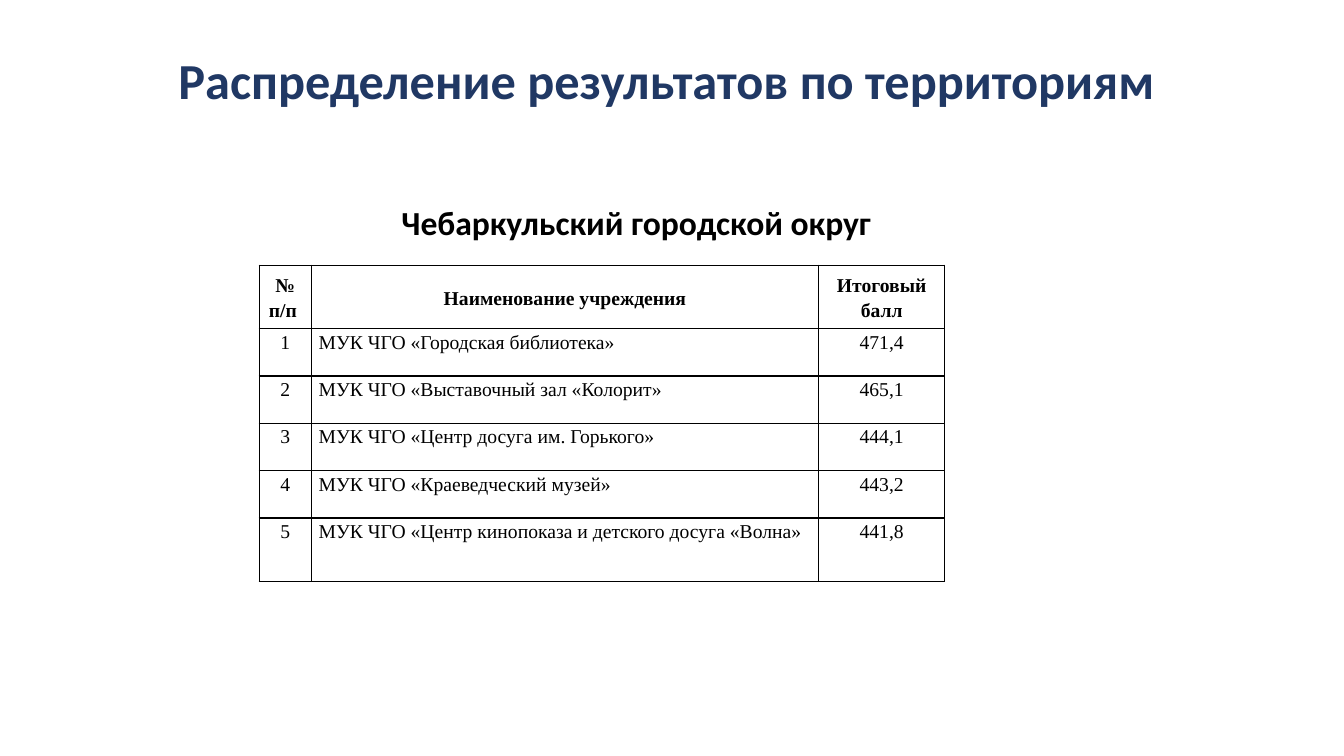
"""Build a slide with the final scores of cultural institutions in one district."""
from dataclasses import dataclass

from lxml import etree
from pptx import Presentation
from pptx.dml.color import RGBColor
from pptx.enum.text import MSO_ANCHOR, PP_ALIGN
from pptx.oxml.ns import qn
from pptx.util import Inches, Pt

LEFT, CENTER = PP_ALIGN.LEFT, PP_ALIGN.CENTER
TOP, MIDDLE, BOTTOM = MSO_ANCHOR.TOP, MSO_ANCHOR.MIDDLE, MSO_ANCHOR.BOTTOM


@dataclass(frozen=True)
class Theme:
    navy: str = "203864"
    black: str = "000000"
    heading_font: str = "Calibri"
    table_font: str = "Times New Roman"
    title_size: int = 36
    subtitle_size: int = 24
    table_size: int = 14
    border_width: int = 1


theme = Theme()


def write_text(frame, text, *, size, font, color=theme.black, bold=True, align=CENTER, spacing=0.9):
    paragraph = frame.paragraphs[0]
    paragraph.alignment = align
    paragraph.line_spacing = spacing
    run = paragraph.add_run()
    run.text = text
    run.font.name = font
    run.font.size = Pt(size)
    run.font.bold = bold
    run.font.color.rgb = RGBColor.from_string(color)


def draw_borders(cell):
    properties = cell._tc.get_or_add_tcPr()
    for index, side in enumerate(("a:lnL", "a:lnR", "a:lnT", "a:lnB")):
        line = etree.Element(qn(side), w=str(Pt(theme.border_width)))
        fill = etree.SubElement(line, qn("a:solidFill"))
        etree.SubElement(fill, qn("a:srgbClr"), val=theme.black)
        properties.insert(index, line)


presentation = Presentation()
presentation.slide_width = Inches(13.33)
presentation.slide_height = Inches(7.5)
slide = presentation.slides.add_slide(presentation.slide_layouts[6])

headings = [
    ("Распределение результатов по территориям ", (0.92, 0.26, 11.5, 1.13),
     MIDDLE, theme.title_size, theme.navy),
    ("Чебаркульский городской округ", (3.49, 1.56, 5.64, 0.9),
     BOTTOM, theme.subtitle_size, theme.black),
]
for text, place, anchor, size, color in headings:
    frame = slide.shapes.add_textbox(*map(Inches, place)).text_frame
    frame.word_wrap = True
    frame.vertical_anchor = anchor
    write_text(frame, text, size=size, font=theme.heading_font, color=color)

header = ("№ п/п ", "Наименование учреждения", "Итоговый балл")
scores = [
    ("МУК ЧГО «Городская библиотека»", "471,4"),
    ("МУК ЧГО «Выставочный зал «Колорит»", "465,1"),
    ("МУК ЧГО «Центр досуга им. Горького»", "444,1"),
    ("МУК ЧГО «Краеведческий музей»", "443,2"),
    ("МУК ЧГО «Центр кинопоказа и детского досуга «Волна»", "441,8"),
]
rows = [header] + [(str(number), *score) for number, score in enumerate(scores, 1)]
column_widths = (0.52, 5.03, 1.25)
row_heights = (0.63, 0.47, 0.47, 0.47, 0.47, 0.63)

table = slide.shapes.add_table(
    len(rows), len(header), Inches(2.57), Inches(2.63),
    Inches(sum(column_widths)), Inches(sum(row_heights))).table
table.first_row = False
table.horz_banding = False
for column, width in zip(table.columns, column_widths):
    column.width = Inches(width)
for row, height in zip(table.rows, row_heights):
    row.height = Inches(height)

for row_index, values in enumerate(rows):
    is_header = row_index == 0
    for column_index, value in enumerate(values):
        cell = table.cell(row_index, column_index)
        cell.fill.background()
        cell.margin_left = cell.margin_right = Inches(0.07)
        cell.margin_top = cell.margin_bottom = 0
        cell.vertical_anchor = MIDDLE if is_header else TOP
        write_text(cell.text_frame, value, size=theme.table_size, font=theme.table_font,
                   bold=is_header, spacing=1.15,
                   align=LEFT if column_index == 1 and not is_header else CENTER)
        draw_borders(cell)

presentation.save("out.pptx")
